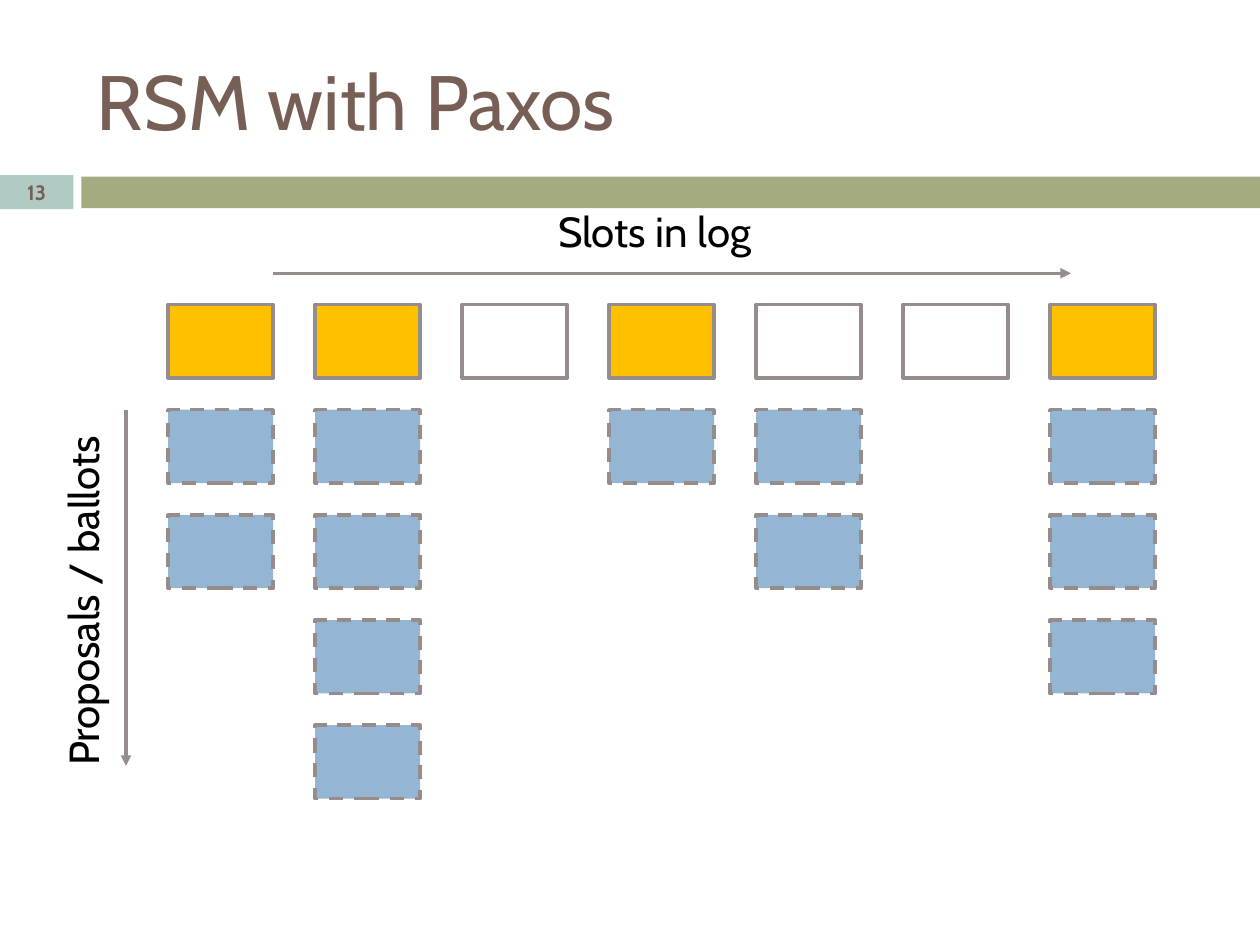
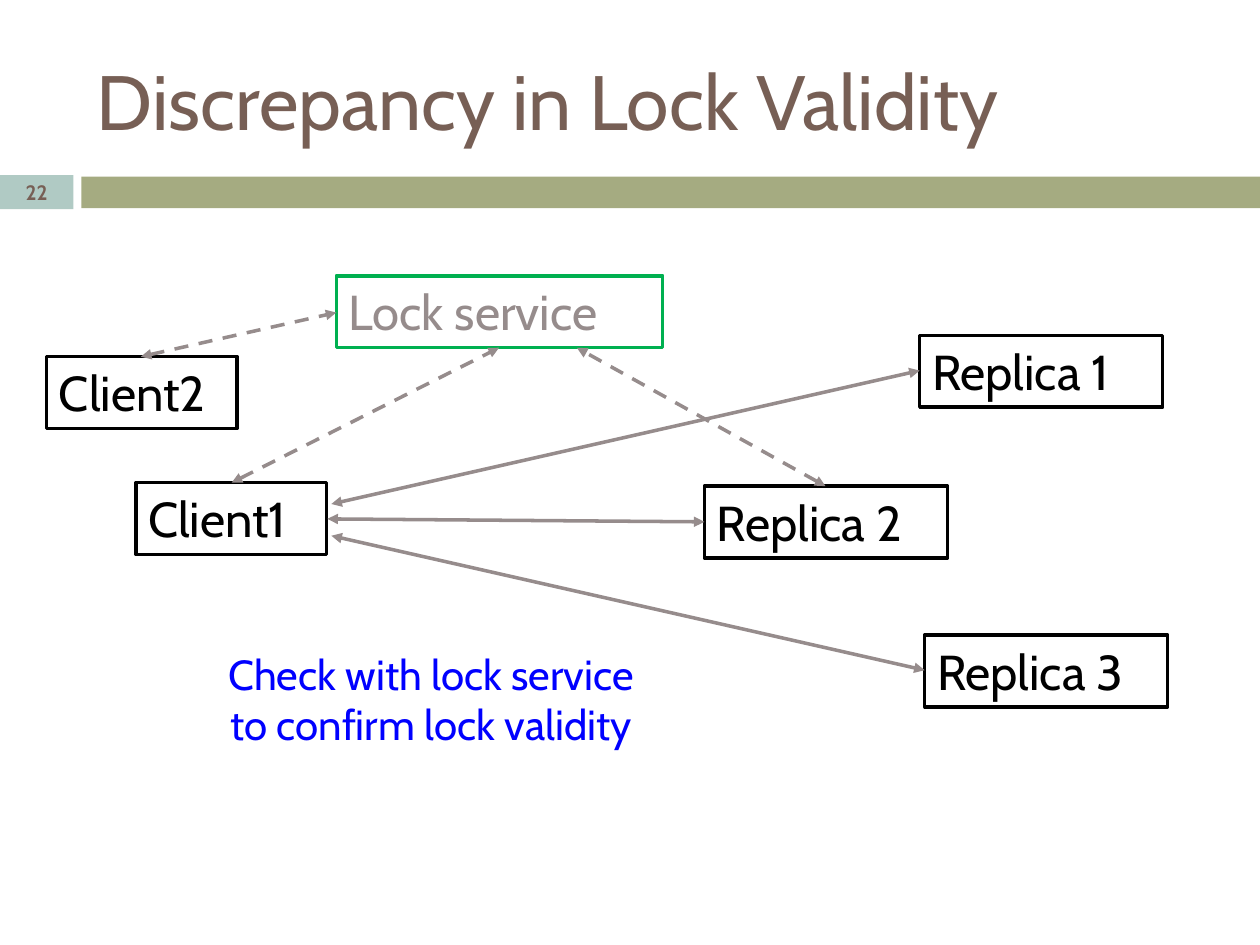
import pptx
import pptx.dml.color
import pptx.enum.dml
import pptx.enum.shapes
import pptx.enum.text
import pptx.oxml
import pptx.oxml.ns
import pptx.util

Cm = pptx.util.Cm
Pt = pptx.util.Pt
RGBColor = pptx.dml.color.RGBColor
ALIGN = pptx.enum.text.PP_ALIGN
ANCHOR = pptx.enum.text.MSO_ANCHOR
DASH = pptx.enum.dml.MSO_LINE.DASH

BROWN = RGBColor(0x77, 0x5F, 0x55)
OLIVE = RGBColor(0xA5, 0xAB, 0x81)
TEAL = RGBColor(0xB0, 0xCA, 0xC4)
GREY = RGBColor(0x96, 0x8C, 0x8C)
AMBER = RGBColor(0xFF, 0xC0, 0x00)
SKY = RGBColor(0x94, 0xB6, 0xD2)
GREEN = RGBColor(0x00, 0xB0, 0x50)
BLUE = RGBColor(0x00, 0x00, 0xFF)
BLACK = RGBColor(0x00, 0x00, 0x00)

# Text formats; "color" is applied apart from the plain font attributes
TITLE = {"size": Pt(44), "color": BROWN}
NUMBER = {"size": Pt(11.9), "bold": True, "color": BROWN}
LABEL = {"size": Pt(24), "color": BLACK}
NOTE = {"size": Pt(24), "color": BLUE}
NODE = {"size": Pt(28), "color": BLACK}
SERVICE = {"size": Pt(28), "color": GREY}


def add_box(slide, place, fill=None, outline=None, dash=None, text="",
            style=LABEL, align=ALIGN.LEFT, anchor=ANCHOR.TOP):
    """Add a rectangle, or a text box when it has neither fill nor outline."""
    lengths = [Cm(length) for length in place]
    if fill is None and outline is None:
        shape = slide.shapes.add_textbox(*lengths)
    else:
        shape = slide.shapes.add_shape(pptx.enum.shapes.MSO_SHAPE.RECTANGLE, *lengths)
        shape.shadow.inherit = False
        for paint, color in ((shape.fill, fill), (shape.line.fill, outline)):
            if color is None:
                paint.background()
            else:
                paint.solid()
                paint.fore_color.rgb = color
        if outline is not None:
            shape.line.width = Pt(2)
            shape.line.dash_style = dash
    if text:
        frame = shape.text_frame
        frame.text = text
        frame.word_wrap = True
        frame.vertical_anchor = anchor
        for paragraph in frame.paragraphs:
            paragraph.alignment = align
            paragraph.font.name = "Cabin"
            for run in paragraph.runs:
                run.font.name = "Cabin"
                for name, value in style.items():
                    if name == "color":
                        run.font.color.rgb = value
                    else:
                        setattr(run.font, name, value)
    return shape


def add_arrow(slide, points, ends=("tailEnd",), dash=None):
    """Add a straight grey line with triangles at the given ends."""
    connector = slide.shapes.add_connector(
        pptx.enum.shapes.MSO_CONNECTOR.STRAIGHT, *[Cm(point) for point in points])
    connector.line.color.rgb = GREY
    connector.line.width = Pt(2)
    connector.line.dash_style = dash
    line = connector.line._get_or_add_ln()
    for end in ends:
        arrowhead = pptx.oxml.parse_xml(
            f'<a:{end} {pptx.oxml.ns.nsdecls("a")} type="triangle"/>')
        line.append(arrowhead)
    connector._element.spPr.append(
        pptx.oxml.parse_xml(f'<a:effectLst {pptx.oxml.ns.nsdecls("a")}/>'))


presentation = pptx.Presentation()
presentation.slide_width = Cm(25.4)
presentation.slide_height = Cm(19.05)

# Shared title, band and slide number
slides = []
for title, number in (("RSM with Paxos", "13"), ("Discrepancy in Lock Validity", "22")):
    slide = presentation.slides.add_slide(presentation.slide_layouts[6])
    add_box(slide, (1.64, 3.56, 23.76, 0.64), fill=OLIVE)
    add_box(slide, (1.7, 0.64, 22.66, 2.74), text=title, style=TITLE, anchor=ANCHOR.MIDDLE)
    add_box(slide, (0, 3.53, 1.48, 0.69), fill=TEAL, text=number, style=NUMBER,
            align=ALIGN.CENTER, anchor=ANCHOR.MIDDLE)
    slides.append(slide)
paxos_slide, lock_slide = slides

# Log slots, with the ballots of each slot below it
SLOT_LEFT, SLOT_TOP = 3.39, 6.14
SLOT_WIDTH, SLOT_HEIGHT = 2.12, 1.48
COLUMN_STEP, ROW_STEP = 17.78 / 6, 2.12
slots = [(True, 2), (True, 4), (False, 0), (True, 1), (False, 2), (False, 0), (True, 3)]
for column, (chosen, ballots) in enumerate(slots):
    left = SLOT_LEFT + column * COLUMN_STEP
    add_box(paxos_slide, (left, SLOT_TOP, SLOT_WIDTH, SLOT_HEIGHT),
            fill=AMBER if chosen else None, outline=GREY)
    for ballot in range(1, ballots + 1):
        add_box(paxos_slide, (left, SLOT_TOP + ballot * ROW_STEP, SLOT_WIDTH, SLOT_HEIGHT),
                fill=SKY, outline=GREY, dash=DASH)

# Axes of the log
add_arrow(paxos_slide, (5.51, 5.51, 21.59, 5.51))
add_arrow(paxos_slide, (2.54, 8.26, 2.54, 15.44))
add_box(paxos_slide, (11, 4.01, 5.11, 1.27), text="Slots in log")
ballots_label = add_box(paxos_slide, (-2.39, 11, 8.1, 1.27), text="Proposals / ballots")
ballots_label.rotation = 270

# Clients, replicas and the lock service
NODE_HEIGHT = 1.45
for name, left, top, width in (
    ("Client1", 2.74, 9.73, 3.84),
    ("Client2", 0.94, 7.19, 3.84),
    ("Replica 1", 18.54, 6.76, 4.9),
    ("Replica 2", 14.2, 9.8, 4.9),
    ("Replica 3", 18.64, 12.8, 4.9),
):
    add_box(lock_slide, (left, top, width, NODE_HEIGHT), outline=BLACK, text=name, style=NODE)
add_box(lock_slide, (6.78, 5.56, 6.58, NODE_HEIGHT), outline=GREEN,
        text="Lock service", style=SERVICE)

# Client requests are solid, lock traffic is dashed
for points, dash in (
    ((6.6, 10.46, 14.2, 10.52), None),
    ((6.68, 10.16, 18.54, 7.47), None),
    ((6.68, 10.8, 18.64, 13.51), None),
    ((4.67, 9.73, 10.06, 7.01), DASH),
    ((16.64, 9.8, 11.63, 7.01), DASH),
    ((2.84, 7.19, 6.78, 6.3), DASH),
):
    add_arrow(lock_slide, points, ends=("headEnd", "tailEnd"), dash=dash)

add_box(lock_slide, (3.99, 12.95, 9.4, 2.31), style=NOTE, align=ALIGN.CENTER,
        text="Check with lock service\nto confirm lock validity")

presentation.save("out.pptx")
